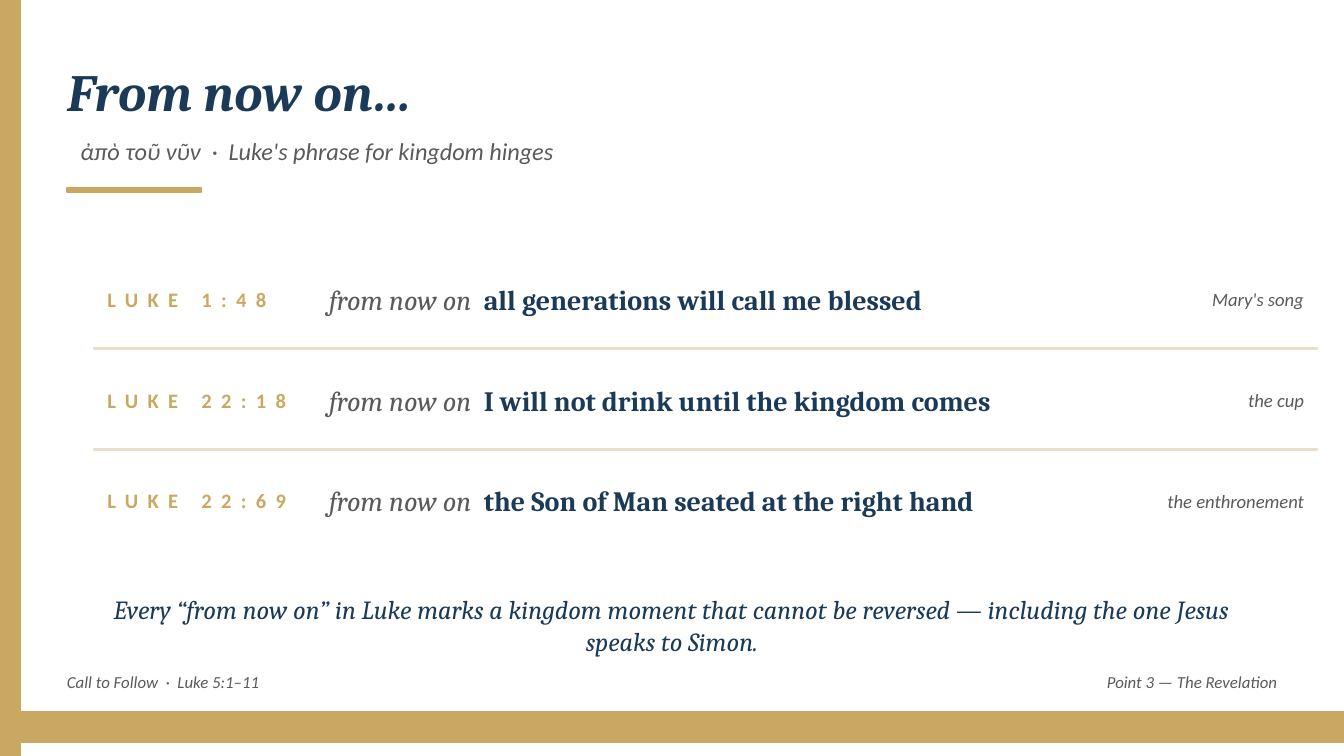
from dataclasses import dataclass

import pptx
import pptx.dml.color
import pptx.enum.shapes
import pptx.enum.text
import pptx.util

ALIGN = pptx.enum.text.PP_ALIGN


@dataclass(frozen=True)
class Style:
    size: float
    font: str
    color: str
    bold: bool = False
    italic: bool = True
    spacing: int = 0  # hundredths of a point


class Theme:
    gold, pale, navy, gray = "C9A961", "E8DFC8", "1B3A57", "5A5A5A"
    serif, sans = "Cambria", "Calibri"
    title = Style(28, serif, navy, bold=True)
    subtitle = Style(13, sans, gray)
    reference = Style(11, sans, gold, bold=True, italic=False, spacing=500)
    phrase = Style(15, serif, gray)
    promise = Style(15, serif, navy, bold=True, italic=False)
    note = Style(10, sans, gray)
    closing = Style(14, serif, navy)
    footer = Style(9, sans, gray)


# The slide is 100 grid units wide; every box is measured in those units.
COLUMNS, ROWS = 100, 56.25
UNIT = pptx.util.Inches(10) // COLUMNS


@dataclass(frozen=True)
class Box:
    x: float
    y: float
    w: float
    h: float

    def inner(self, x, y, w, h):
        return Box(self.x + x, self.y + y, w, h)

    def emu(self):
        return [round(v * UNIT) for v in (self.x, self.y, self.w, self.h)]


def rgb(color):
    return pptx.dml.color.RGBColor.from_string(color)


def style_font(font, style):
    font.size = pptx.util.Pt(style.size)
    font.name = style.font
    font.bold, font.italic = style.bold, style.italic
    font.color.rgb = rgb(style.color)


def add_bar(s, box, color):
    bar = s.shapes.add_shape(pptx.enum.shapes.MSO_SHAPE.RECTANGLE, *box.emu())
    bar.shadow.inherit = False
    bar.fill.solid()
    bar.fill.fore_color.rgb = rgb(color)
    bar.line.color.rgb = rgb(color)
    bar.line.width = pptx.util.Pt(1)


def add_text(s, box, runs, align=ALIGN.LEFT):
    """Place one paragraph made of (text, style) runs."""
    tf = s.shapes.add_textbox(*box.emu()).text_frame
    tf.word_wrap = True
    tf.vertical_anchor = pptx.enum.text.MSO_ANCHOR.MIDDLE
    p = tf.paragraphs[0]
    p.alignment = align
    if len(runs) == 1:
        style_font(p.font, runs[0][1])
    for text, style in runs:
        r = p.add_run()
        r.text = text
        if len(runs) > 1:
            style_font(r.font, style)
        if style.spacing:
            r._r.get_or_add_rPr().set("spc", str(style.spacing))


def add_frame(s, box):
    add_bar(s, box.inner(0, 0, 1.5, box.h), Theme.gold)
    add_bar(s, box.inner(0, 53, box.w, 2.2), Theme.gold)


def add_heading(s, box, title, subtitle):
    # Title placeholder
    sp = s.shapes.title
    sp.left, sp.top, sp.width, sp.height = box.inner(0, 0, box.w, 5.5).emu()
    tf = sp.text_frame
    tf.text = title
    tf.word_wrap = True
    tf.auto_size = pptx.enum.text.MSO_AUTO_SIZE.NONE
    tf.vertical_anchor = pptx.enum.text.MSO_ANCHOR.MIDDLE
    tf.margin_left = tf.margin_right = tf.margin_top = tf.margin_bottom = 0
    p = tf.paragraphs[0]
    p.alignment = ALIGN.LEFT
    style_font(p.font, Theme.title)
    # Subtitle and accent rule
    add_text(s, box.inner(0, 5.7, box.w, 3), [(subtitle, Theme.subtitle)])
    add_bar(s, box.inner(0, 10, 10, 0.3), Theme.gold)


def add_verses(s, box, phrase, verses):
    row_h = box.h / len(verses)
    for i, (reference, promise, note) in enumerate(verses):
        row = box.inner(0, i * row_h, box.w, row_h)
        add_text(s, row.inner(0, 0, 15.5, row_h), [(reference, Theme.reference)])
        add_text(s, row.inner(16.5, 0, 59.5, row_h),
                 [(phrase, Theme.phrase), (promise, Theme.promise)])
        add_text(s, row.inner(76, 0, 15, row_h), [(note, Theme.note)], ALIGN.RIGHT)
        # Divider between rows
        if i < len(verses) - 1:
            add_bar(s, row.inner(0, row_h - 0.1, row.w, 0.1), Theme.pale)


def add_footer(s, box, left, right):
    add_text(s, box.inner(0, 0, 60, box.h), [(left, Theme.footer)])
    add_text(s, box.inner(61, 0, 31, box.h), [(right, Theme.footer)], ALIGN.RIGHT)


def main():
    prs = pptx.Presentation()
    prs.slide_width, prs.slide_height = COLUMNS * UNIT, round(ROWS * UNIT)
    s = prs.slides.add_slide(prs.slide_layouts.get_by_name("Title Only"))

    add_frame(s, Box(0, 0, COLUMNS, ROWS))
    add_heading(s, Box(5, 4, 90, 10.3), "From now on…",
                "ἀπὸ τοῦ νῦν  ·  Luke's phrase for kingdom hinges")
    add_verses(s, Box(7, 18.5, 91, 22.5), "from now on  ", [
        ("LUKE 1:48", "all generations will call me blessed", "Mary's song"),
        ("LUKE 22:18", "I will not drink until the kingdom comes", "the cup"),
        ("LUKE 22:69", "the Son of Man seated at the right hand", "the enthronement"),
    ])
    add_text(s, Box(7, 44, 86, 5), [(
        "Every “from now on” in Luke marks a kingdom moment that cannot be "
        "reversed — including the one Jesus speaks to Simon.",
        Theme.closing)], ALIGN.CENTER)
    add_footer(s, Box(4, 49.5, 92, 2.5),
               "Call to Follow  ·  Luke 5:1–11", "Point 3 — The Revelation")

    prs.save("out.pptx")


if __name__ == "__main__":
    main()
